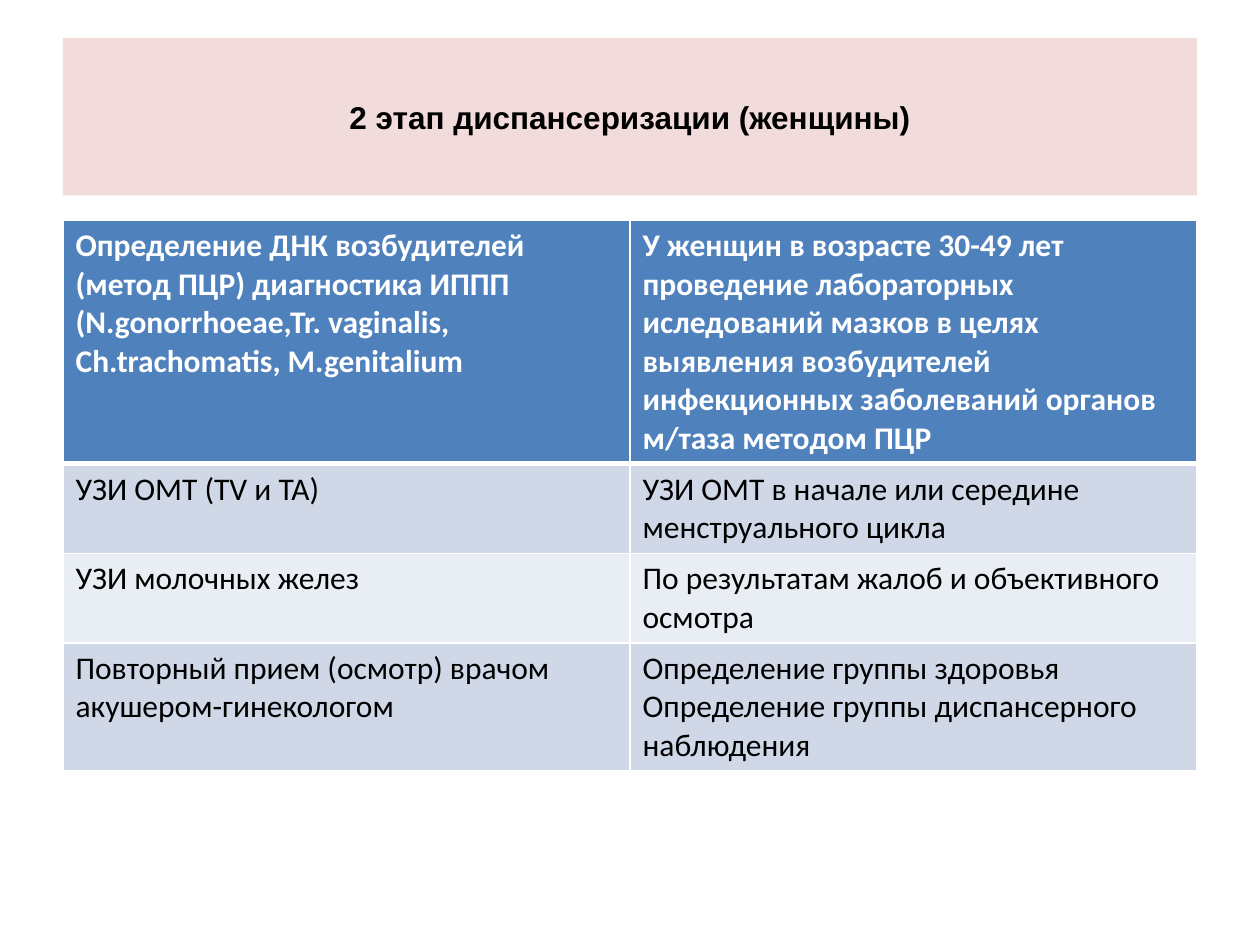
from lxml import etree
from pptx import Presentation
from pptx.dml.color import RGBColor
from pptx.enum.shapes import MSO_SHAPE
from pptx.enum.text import MSO_ANCHOR, PP_ALIGN
from pptx.oxml.ns import qn
from pptx.util import Inches, Pt

RECT = MSO_SHAPE.RECTANGLE
MIDDLE = MSO_ANCHOR.MIDDLE
LEFT, CENTER = PP_ALIGN.LEFT, PP_ALIGN.CENTER

BLACK = RGBColor(0x00, 0x00, 0x00)
WHITE = RGBColor(0xFF, 0xFF, 0xFF)
PINK = RGBColor(0xF2, 0xDC, 0xDB)
BLUE = RGBColor(0x4F, 0x81, 0xBD)
BANDS = (RGBColor(0xD0, 0xD8, 0xE8), RGBColor(0xE9, 0xED, 0xF4))

MARGIN, CONTENT_WIDTH = 0.5, 9
ROW_HEIGHTS = (1.93, 0.71, 0.71, 1.01)
ROWS = (
    ("Определение ДНК возбудителей (метод ПЦР) диагностика ИППП "
     "(N.gonorrhoeae,Tr. vaginalis, Ch.trachomatis, M.genitalium",
     "У женщин в возрасте 30-49 лет проведение лабораторных иследований "
     "мазков в целях выявления возбудителей инфекционных заболеваний "
     "органов м/таза методом ПЦР"),
    ("УЗИ ОМТ (TV и TA)",
     "УЗИ ОМТ в начале или середине менструального цикла"),
    ("УЗИ молочных желез",
     "По результатам жалоб и объективного осмотра"),
    ("Повторный прием (осмотр) врачом акушером-гинекологом",
     "Определение группы здоровья\n"
     "Определение группы диспансерного наблюдения"),
)


class SlideBuilder:
    def __init__(self, slide):
        self.slide = slide
        self.font = {"name": "Calibri", "size": Pt(18), "bold": False}

    def set_text(self, tf, text, color, align=LEFT, **font):
        """Fill a text frame, one paragraph for each line of text."""
        tf.text = text
        for p in tf.paragraphs:
            p.alignment = align
            for r in p.runs:
                for key, value in {**self.font, **font}.items():
                    setattr(r.font, key, value)
                r.font.color.rgb = color

    def banner(self, text, top, height):
        sp = self.slide.shapes.add_shape(
            RECT, Inches(MARGIN), Inches(top),
            Inches(CONTENT_WIDTH), Inches(height))
        sp.shadow.inherit = False
        sp.fill.solid()
        sp.fill.fore_color.rgb = PINK
        sp.line.fill.background()
        tf = sp.text_frame
        tf.word_wrap = True
        tf.vertical_anchor = MIDDLE
        self.set_text(tf, text, BLACK, CENTER, name="Arial", bold=True)

    def borders(self, cell, **widths):
        """Draw white borders; widths are in points, keyed by side."""
        tc_pr = cell._tc.get_or_add_tcPr()
        for i, (side, width) in enumerate(widths.items()):
            ln = etree.Element(qn(f"a:ln{side}"), w=str(Pt(width)))
            fill = etree.SubElement(ln, qn("a:solidFill"))
            etree.SubElement(fill, qn("a:srgbClr"), val=str(WHITE))
            tc_pr.insert(i, ln)

    def table(self, rows, heights, top):
        table = self.slide.shapes.add_table(
            len(rows), len(rows[0]), Inches(MARGIN), Inches(top),
            Inches(CONTENT_WIDTH), Inches(sum(heights))).table
        for i, (texts, height) in enumerate(zip(rows, heights)):
            table.rows[i].height = Inches(height)
            header = i == 0
            for j, text in enumerate(texts):
                cell = table.cell(i, j)
                cell.fill.solid()
                cell.fill.fore_color.rgb = BLUE if header else BANDS[(i - 1) % 2]
                self.set_text(cell.text_frame, text,
                              WHITE if header else BLACK, bold=header)
                self.borders(cell, L=1, R=1, T=3 if i == 1 else 1,
                             B=3 if header else 1)


def main():
    prs = Presentation()
    prs.slide_width, prs.slide_height = Inches(10), Inches(7.5)
    s = SlideBuilder(prs.slides.add_slide(prs.slide_layouts[6]))
    s.banner("2 этап диспансеризации (женщины)", top=0.3, height=1.25)
    s.table(ROWS, ROW_HEIGHTS, top=1.75)
    prs.save("out.pptx")


if __name__ == "__main__":
    main()
